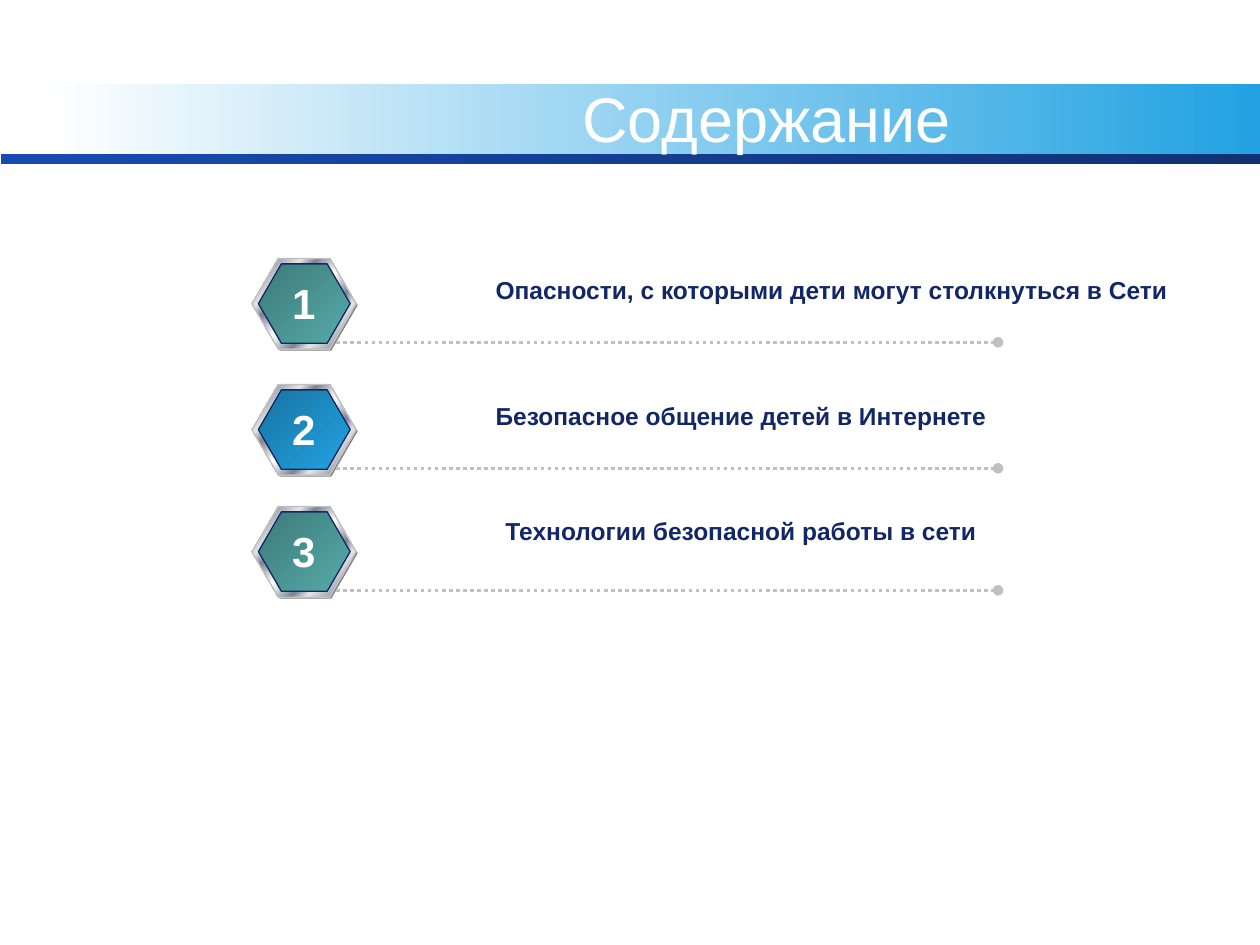
from lxml.etree import SubElement
from pptx import Presentation
from pptx.dml.color import RGBColor
from pptx.enum.dml import MSO_LINE
from pptx.enum.shapes import MSO_CONNECTOR, MSO_SHAPE
from pptx.enum.text import MSO_ANCHOR, PP_ALIGN
from pptx.oxml.ns import qn
from pptx.util import Cm, Pt

WHITE = RGBColor(0xFF, 0xFF, 0xFF)
SKY = RGBColor(0x22, 0xA2, 0xE2)
DEEP_SKY = RGBColor(0x18, 0x74, 0xA2)
BLUE = RGBColor(0x18, 0x4B, 0xB2)
DARK_BLUE = RGBColor(0x10, 0x31, 0x75)
NAVY = RGBColor(0x13, 0x27, 0x67)
TEAL = RGBColor(0x55, 0xAB, 0xA9)
DEEP_TEAL = RGBColor(0x3D, 0x7A, 0x79)
GRAY = RGBColor(0x80, 0x80, 0x80)
SILVER = RGBColor(0xC0, 0xC0, 0xC0)
PALE = RGBColor(0xE6, 0xE6, 0xE6)
STEEL = RGBColor(0x7D, 0x84, 0x96)

METAL = [(0, PALE), (7, STEEL), (26, PALE), (34, STEEL), (46, PALE), (50, WHITE),
         (54, PALE), (66, STEEL), (74, PALE), (93, STEEL), (100, PALE)]


def add_filled(kind, left, top, width, height, stops, angle=0, outline=None):
    """Add a shape (lengths in cm) with a gradient, or a plain fill for one stop."""
    shape = page.shapes.add_shape(kind, Cm(left), Cm(top), Cm(width), Cm(height))
    shape.shadow.inherit = False
    if kind == MSO_SHAPE.HEXAGON:
        shape.adjustments[0] = 0.29
    shape.fill.solid()
    shape.fill.fore_color.rgb = stops[0][1]
    if outline is None:
        shape.line.fill.background()
    else:
        shape.line.color.rgb = outline
        shape.line.width = Pt(0.75)
    if len(stops) > 1:
        solid = shape._element.spPr.find(qn("a:solidFill"))
        gradient = solid.makeelement(qn("a:gradFill"), {"rotWithShape": "1"})
        stop_list = SubElement(gradient, qn("a:gsLst"))
        for position, color in stops:
            stop = SubElement(stop_list, qn("a:gs"), pos=str(position * 1000))
            SubElement(stop, qn("a:srgbClr"), val=str(color))
        SubElement(gradient, qn("a:lin"), ang=str(angle * 60000), scaled="0")
        solid.getparent().replace(solid, gradient)


def add_text(text, left, top, width, height, size, color, bold=True,
             align=PP_ALIGN.LEFT, anchor=MSO_ANCHOR.TOP, wrap=False):
    """Add a text box (lengths in cm) holding one run."""
    box = page.shapes.add_textbox(Cm(left), Cm(top), Cm(width), Cm(height))
    box.text_frame.word_wrap = wrap
    box.text_frame.vertical_anchor = anchor
    para = box.text_frame.paragraphs[0]
    para.alignment = align
    span = para.add_run()
    span.text = text
    span.font.name = "Arial"
    span.font.size = Pt(size)
    span.font.bold = bold
    span.font.color.rgb = color


deck = Presentation()
deck.slide_width = Cm(25.4)
deck.slide_height = Cm(19.05)
page = deck.slides.add_slide(deck.slide_layouts[6])

# Title band
add_filled(MSO_SHAPE.RECTANGLE, 0.85, 1.69, 24.55, 1.48, [(0, WHITE), (100, SKY)])
add_filled(MSO_SHAPE.RECTANGLE, 0.02, 3.1, 25.38, 0.2, [(0, BLUE), (100, DARK_BLUE)])
add_text("Содержание", 6.77, 1.69, 17.36, 1.35, 36, WHITE, bold=False,
         align=PP_ALIGN.CENTER, anchor=MSO_ANCHOR.MIDDLE, wrap=True)

# Contents: row top, label left, label offset, label width, label, badge colours
rows = [
    (5.21, 9.74, 0.2, 14.15, "Опасности, с которыми дети могут столкнуться в Сети", DEEP_TEAL, TEAL),
    (7.75, 9.74, 0.2, 10.46, "Безопасное общение детей в Интернете", DEEP_SKY, SKY),
    (10.21, 9.94, 0.07, 10.06, "Технологии безопасной работы в сети", DEEP_TEAL, TEAL),
]
for number, (top, left, offset, width, label, dark, light) in enumerate(rows, 1):
    # Badge: shade, metal rim, coloured face
    add_filled(MSO_SHAPE.HEXAGON, 5.11, top + 0.03, 2.1, 1.83, [(0, GRAY)])
    add_filled(MSO_SHAPE.HEXAGON, 5.08, top, 2.1, 1.83, METAL, 45, SILVER)
    add_filled(MSO_SHAPE.HEXAGON, 5.21, top + 0.11, 1.85, 1.6,
               [(0, dark), (100, light)], 45, NAVY)

    # Dotted rule with a round end
    rule = page.shapes.add_connector(MSO_CONNECTOR.STRAIGHT, Cm(6.78), Cm(top + 1.69),
                                     Cm(20.12), Cm(top + 1.69))
    rule.line.color.rgb = SILVER
    rule.line.width = Pt(2)
    rule.line.dash_style = MSO_LINE.ROUND_DOT
    SubElement(rule.line._get_or_add_ln(), qn("a:tailEnd"), type="oval")
    SubElement(rule._element.spPr, qn("a:effectLst"))

    # Label and number
    add_text(label, left, top + offset, width, 0.86, 14, NAVY)
    add_text(str(number), 5.63, top + 0.26, 0.99, 1.27, 24, WHITE, align=PP_ALIGN.CENTER)

deck.save("out.pptx")
